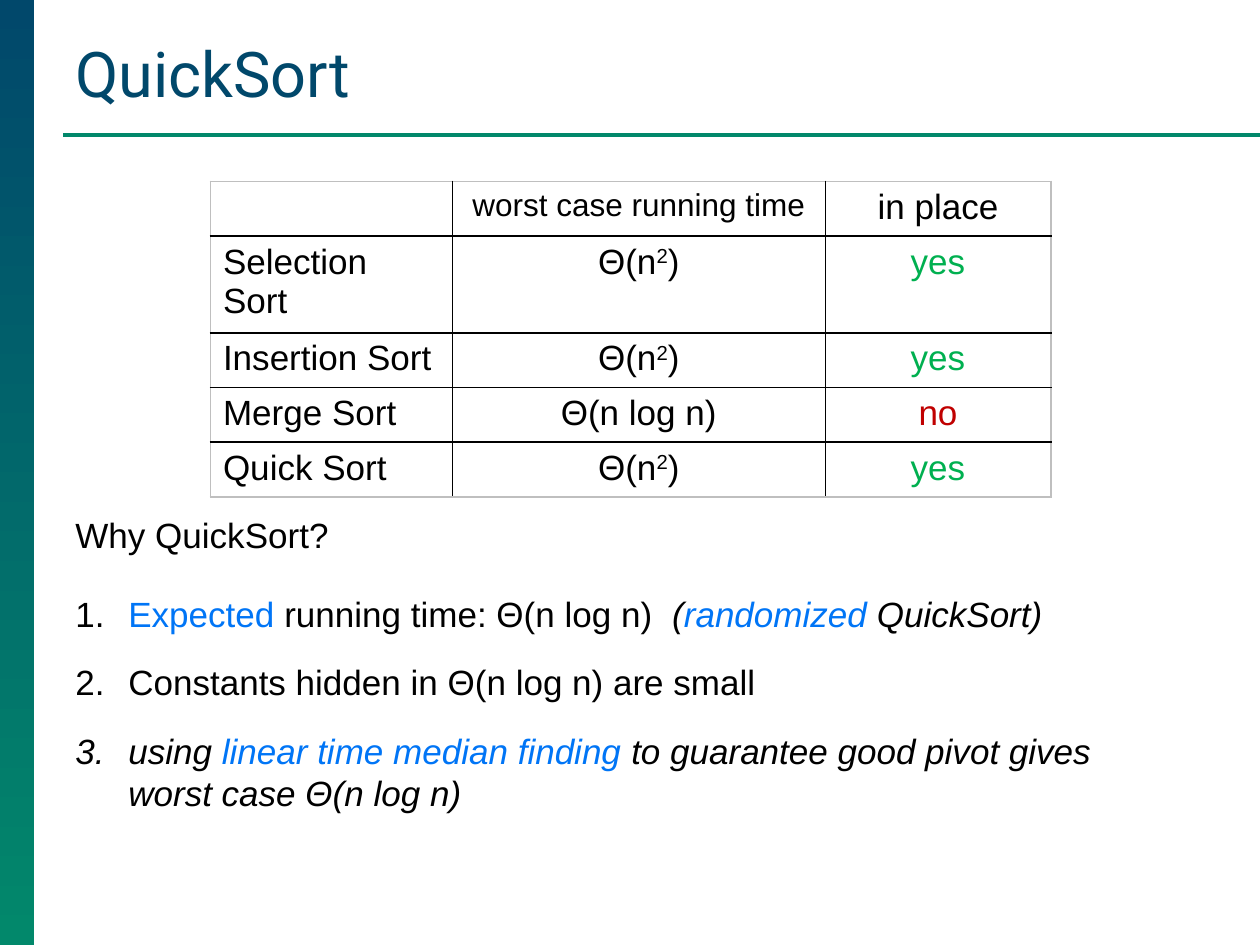
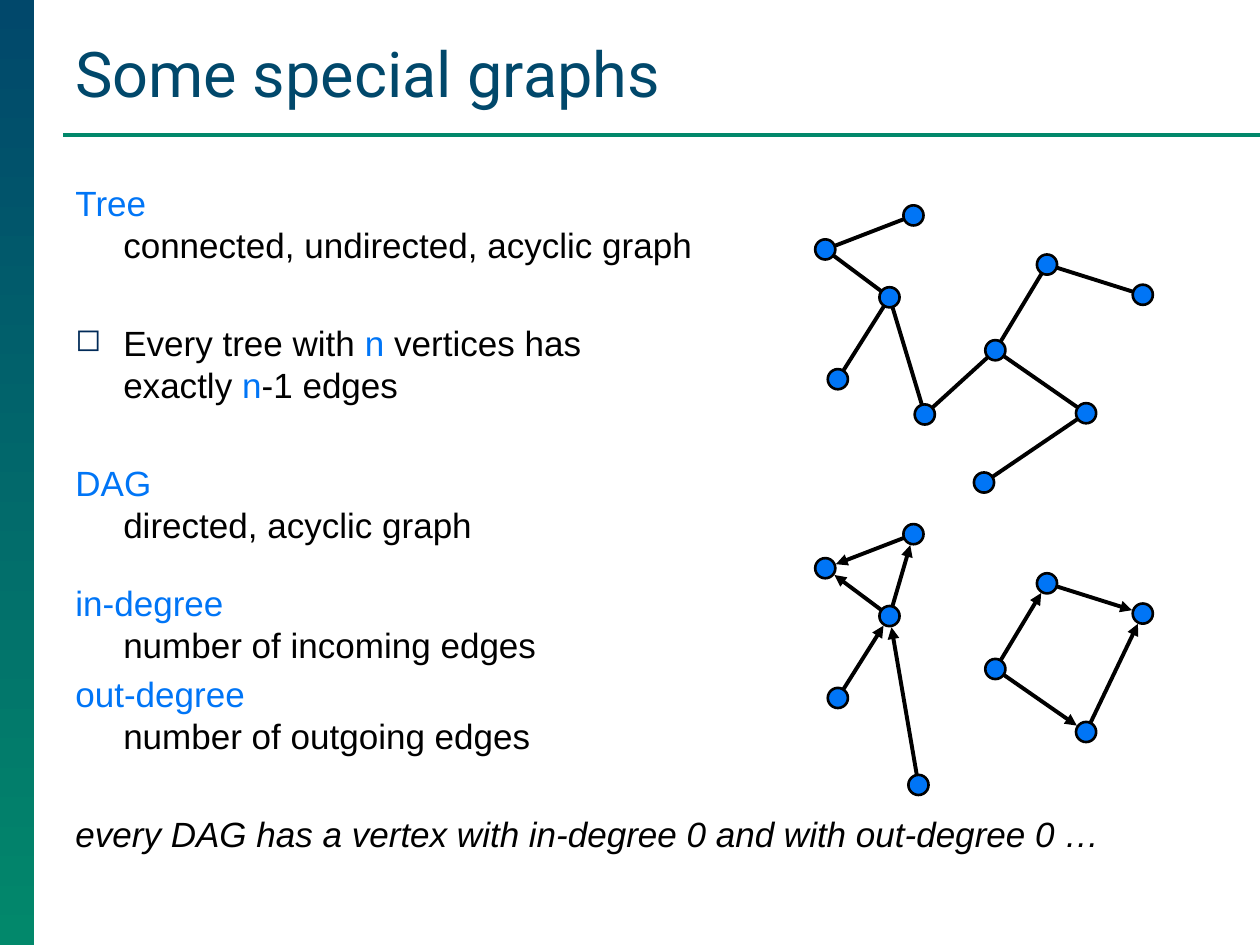
from math import hypot

from lxml.etree import SubElement
from pptx import Presentation
from pptx.dml.color import RGBColor
from pptx.enum.shapes import MSO_CONNECTOR, MSO_SHAPE
from pptx.enum.text import MSO_ANCHOR, PP_ALIGN
from pptx.oxml.ns import qn
from pptx.util import Inches, Pt

COLOURS = {
    "navy": "01486B", "green": "02886B", "blue": "0075F6", "black": "000000",
    "bullet": "002A58", "yes": "00B050", "no": "C00000", "grey": "BFBFBF",
}
BODY_SIZE = 20
NODE_SIZE = 0.16
ARROW_GAP = 0.09


def rgb(name):
    return RGBColor.from_string(COLOURS[name])


def add_span(para, text, size=BODY_SIZE, font="Arial", colour="black", italic=False, raised=False):
    """Add text to a paragraph; a newline becomes a line break."""
    for number, line in enumerate(text.split("\n")):
        if number:
            para.add_line_break()
        if not line:
            continue
        span = para.add_run()
        span.text = line
        span.font.size = Pt(size)
        span.font.name = font
        span.font.italic = italic
        span.font.color.rgb = rgb(colour)
        if raised:
            span.font._element.set("baseline", "30000")


def add_solid(parent, colour):
    fill = SubElement(parent, qn("a:solidFill"))
    SubElement(fill, qn("a:srgbClr"), val=COLOURS[colour])


def set_bullet(para, bullet):
    properties = para._p.get_or_add_pPr()
    colour = SubElement(properties, qn("a:buClr"))
    SubElement(colour, qn("a:srgbClr"), val=COLOURS["black" if bullet == "1." else "bullet"])
    if bullet == "1.":
        SubElement(properties, qn("a:buAutoNum"), type="arabicPeriod")
    else:
        SubElement(properties, qn("a:buSzPct"), val="90000")
        SubElement(properties, qn("a:buChar"), char=bullet)


class SlideBuilder:
    def __init__(self):
        self.deck = Presentation()
        self.deck.slide_width, self.deck.slide_height = Inches(10), Inches(7.5)
        self.page = None

    def new_page(self, title):
        self.page = self.deck.slides.add_slide(self.deck.slide_layouts[6])
        # Side band and title rule
        band = self.page.shapes.add_shape(
            MSO_SHAPE.RECTANGLE, 0, 0, Inches(0.27), self.deck.slide_height)
        band.shadow.inherit = False
        band.line.fill.background()
        band.fill.gradient()
        band.fill.gradient_angle = 270
        for stop, colour in zip(band.fill.gradient_stops, ("navy", "green")):
            stop.color.rgb = rgb(colour)
        self.line(self.page.shapes, (0.5, 1.07), (10, 1.07), "green")
        # Title
        frame = self.text_frame(0.5, 0.21, 9.28, 0.71)
        frame.vertical_anchor = MSO_ANCHOR.BOTTOM
        add_span(frame.paragraphs[0], title, size=36, font="Roboto", colour="navy")

    def text_frame(self, left, top, width, height):
        box = self.page.shapes.add_textbox(
            Inches(left), Inches(top), Inches(width), Inches(height))
        box.text_frame.word_wrap = True
        return box.text_frame

    def body(self, top, height, indent, paragraphs):
        """Each paragraph is (space before, bullet, [(text, format), ...])."""
        frame = self.text_frame(0.5, top, 8.92, height)
        for number, (space, bullet, spans) in enumerate(paragraphs):
            para = frame.add_paragraph() if number else frame.paragraphs[0]
            properties = para._p.get_or_add_pPr()
            properties.set("marL", str(Inches(indent)))
            properties.set("indent", str(-Inches(indent)))
            if bullet:
                set_bullet(para, bullet)
            para.line_spacing = Pt(24)
            para.space_before = Pt(space)
            for text, style in spans:
                add_span(para, text, **style)

    def line(self, shapes, start, end, colour="black", arrow=False):
        connector = shapes.add_connector(
            MSO_CONNECTOR.STRAIGHT, *(Inches(value) for value in (*start, *end)))
        connector.line.width = Pt(2.25)
        connector.line.color.rgb = rgb(colour)
        if arrow:
            SubElement(connector.line._get_or_add_ln(), qn("a:tailEnd"), type="triangle")
        SubElement(connector._element.spPr, qn("a:effectLst"))

    def graph(self, nodes, edges, directed=False):
        shapes = self.page.shapes.add_group_shape().shapes
        for source, target in edges:
            (x1, y1), (x2, y2) = nodes[source], nodes[target]
            if directed:
                share = ARROW_GAP / hypot(x2 - x1, y2 - y1)
                x2, y2 = x2 - share * (x2 - x1), y2 - share * (y2 - y1)
            self.line(shapes, (x1, y1), (x2, y2), arrow=directed)
        for x, y in nodes.values():
            node = shapes.add_shape(
                MSO_SHAPE.OVAL, Inches(x - NODE_SIZE / 2), Inches(y - NODE_SIZE / 2),
                Inches(NODE_SIZE), Inches(NODE_SIZE))
            node.shadow.inherit = False
            node.fill.solid()
            node.fill.fore_color.rgb = rgb("blue")
            node.line.color.rgb = rgb("black")
            node.line.width = Pt(1.5)

    def table(self, left, top, widths, row_height, rows):
        """Each cell is a list of (text, format); first column is left-aligned."""
        table = self.page.shapes.add_table(
            len(rows), len(widths), Inches(left), Inches(top),
            Inches(sum(widths)), Inches(row_height * len(rows))).table
        table.first_row = table.horz_banding = False
        for column, width in zip(table.columns, widths):
            column.width = Inches(width)
        for r, row in enumerate(rows):
            table.rows[r].height = Inches(row_height)
            for c, spans in enumerate(row):
                cell = table.cell(r, c)
                para = cell.text_frame.paragraphs[0]
                para.alignment = PP_ALIGN.CENTER if c else PP_ALIGN.LEFT
                for text, style in spans:
                    add_span(para, text, **style)
                outer = {"L": c == 0, "R": c == len(widths) - 1,
                         "T": r == 0, "B": r == len(rows) - 1}
                for side, is_outer in outer.items():
                    border = SubElement(
                        cell._tc.get_or_add_tcPr(), qn(f"a:ln{side}"), w=str(Pt(1)))
                    add_solid(border, "grey" if is_outer else "black")
                cell.fill.background()


def quicksort_page(builder):
    builder.new_page("QuickSort")
    # Comparison of sorting algorithms
    squared = [("Θ(n", {}), ("2", {"raised": True}), (")", {})]
    linearithmic = [("Θ(n log n)", {})]
    rows = [[[], [("worst case running time", {"size": 18})], [("in place", {})]]]
    for name, time, in_place in (
            ("Selection", squared, "yes"), ("Insertion", squared, "yes"),
            ("Merge", linearithmic, "no"), ("Quick", squared, "yes")):
        rows.append([[(f"{name} Sort", {})], time, [(in_place, {"colour": in_place})]])
    builder.table(1.67, 1.44, (1.92, 2.96, 1.79), 0.41, rows)
    # Reasons
    italic = {"italic": True}
    blue_italic = {"italic": True, "colour": "blue"}
    builder.body(4.03, 2.87, 0.42, [
        (0, None, [("Why QuickSort?", {})]),
        (21, "1.", [("Expected", {"colour": "blue"}), (" running time: Θ(n log n)  ", {}),
                    ("(", italic), ("randomized ", blue_italic), ("QuickSort)", italic)]),
        (15, "1.", [("Constants hidden in Θ(n log n) are small", {})]),
        (15, "1.", [("using ", italic), ("linear time median finding", blue_italic),
                    (" to guarantee good pivot gives worst case Θ(n log n)", italic)]),
    ])


def graphs_page(builder):
    builder.new_page("Some special graphs")
    # Definitions
    blue = {"colour": "blue"}

    def definition(space, term, meaning):
        return space, None, [(term + "\n", blue), (meaning, {})]

    builder.body(1.39, 5.75, 0.38, [
        definition(0, "Tree", "connected, undirected, acyclic graph"),
        (32, "◻", [("Every tree with ", {}), ("n", blue), (" vertices has \nexactly ", {}),
                   ("n", blue), ("-1 edges", {})]),
        definition(32, "DAG", "directed, acyclic graph"),
        definition(20.5, "in-degree", "number of incoming edges"),
        definition(4, "out-degree", "number of outgoing edges"),
        (32, None, [("every DAG has a vertex with in-degree 0 and with out-degree 0 …",
                     {"italic": True})]),
    ])
    # Tree
    shared = {
        "hub": (7.06, 2.36), "left": (6.55, 1.98), "top": (7.25, 1.71), "low": (6.65, 3.01),
        "middle": (7.9, 2.78), "upper": (8.31, 2.1), "right": (9.07, 2.34),
        "corner": (8.62, 3.28),
    }
    builder.graph({**shared, "bottom": (7.34, 3.29), "end": (7.81, 3.83)}, [
        ("bottom", "middle"), ("middle", "corner"), ("end", "corner"), ("left", "top"),
        ("left", "hub"), ("low", "hub"), ("hub", "bottom"), ("middle", "upper"),
        ("upper", "right")])
    # DAG: the shared vertices moved down
    lowered = {name: (x, y + 2.53) for name, (x, y) in shared.items()}
    builder.graph({**lowered, "bottom": (7.29, 6.23)}, [
        ("hub", "left"), ("hub", "top"), ("top", "left"), ("low", "hub"), ("bottom", "hub"),
        ("middle", "upper"), ("upper", "right"), ("corner", "right"), ("middle", "corner")],
        directed=True)


def main():
    builder = SlideBuilder()
    quicksort_page(builder)
    graphs_page(builder)
    builder.deck.save("out.pptx")


if __name__ == "__main__":
    main()
